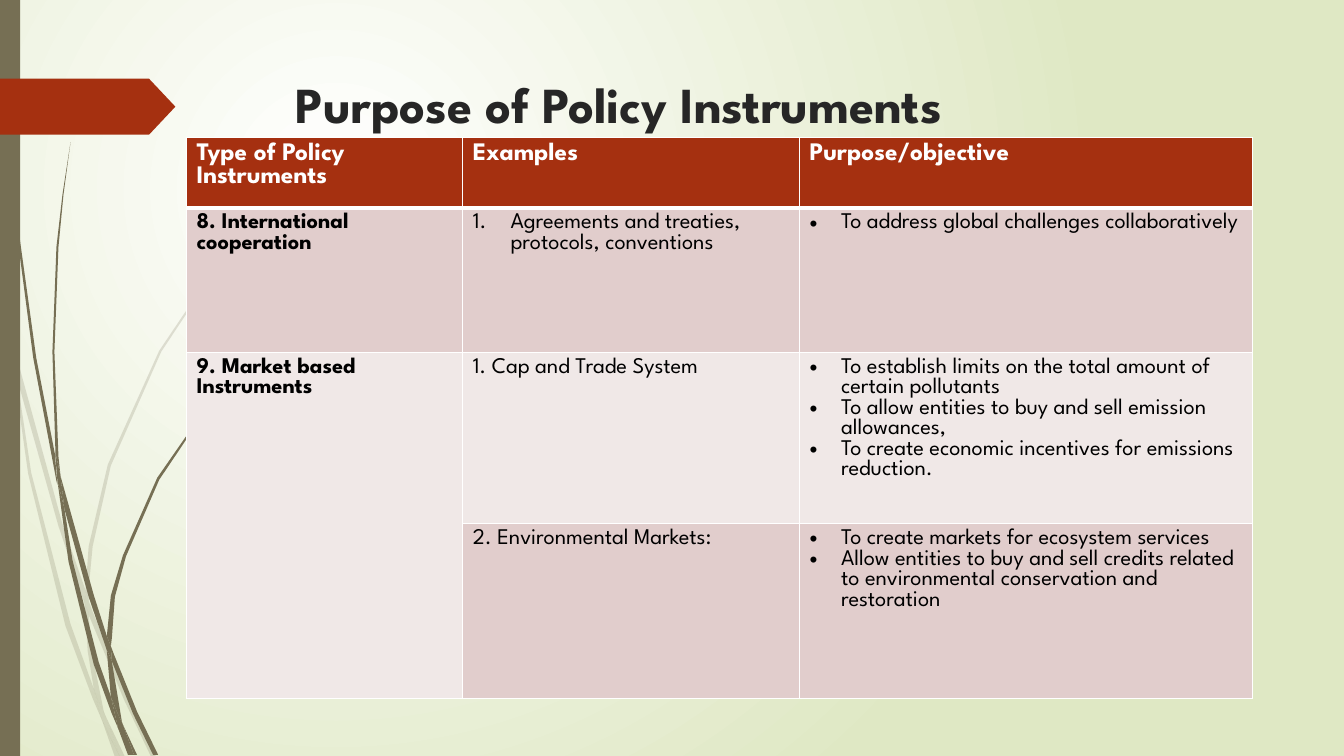
from dataclasses import dataclass

from lxml import etree
from pptx import Presentation
from pptx import util as u
from pptx.dml.color import RGBColor
from pptx.enum import shapes, text
from pptx.oxml import ns

OLIVE = RGBColor(0x76, 0x6F, 0x54)
RUST = RGBColor(0xA5, 0x30, 0x10)
PALE_GREEN = RGBColor(0xDF, 0xE8, 0xC4)
CHARCOAL = RGBColor(0x26, 0x26, 0x26)
ROSE = RGBColor(0xE1, 0xCD, 0xCC)
BLUSH = RGBColor(0xF0, 0xE8, 0xE7)
WHITE = RGBColor(0xFF, 0xFF, 0xFF)
BLACK = RGBColor(0, 0, 0)
FONT = "League Spartan"
GRASS_UNIT = u.Pt(0.72)

Point = tuple[int, int]


@dataclass(frozen=True)
class Grass:
    opacity: int
    blades: list[list[Point]]


@dataclass(frozen=True)
class Entry:
    lines: tuple[str, ...]
    fill: RGBColor
    bold: bool = False
    bullet: str = ""
    size: float = 16
    color: RGBColor = BLACK


FADED_GRASS = Grass(20, [
    [(11, 350), (9, 322), (0, 282), (0, 299), (10, 344)],
    [(58, 522), (84, 599), (85, 586), (62, 520), (14, 345), (17, 376)],
    [(92, 607), (88, 596), (88, 610), (123, 694), (150, 751), (155, 751), (127, 692)],
    [(119, 751), (124, 751), (105, 711)],
    [(93, 683), (70, 619), (31, 469), (17, 376), (11, 350), (28, 470), (65, 621), (92, 693), (101, 714), (99, 707)],
    [(84, 599), (87, 646), (93, 683), (96, 692), (105, 711), (103, 706), (91, 646), (88, 610), (88, 608)],
    [(88, 584), (92, 542), (110, 462), (160, 349), (229, 245), (268, 198), (290, 175), (312, 154), (312, 153),
     (289, 175), (268, 197), (228, 244), (158, 348), (107, 461), (88, 542), (85, 584), (85, 586), (88, 596)],
    [(101, 714), (114, 751), (119, 751)],
    [(88, 608), (88, 610), (88, 596), (85, 586), (84, 599)],
    [(96, 692), (93, 683), (99, 707), (101, 714), (119, 751), (105, 711)],
])
SOLID_GRASS = Grass(100, [
    [(7, 110), (17, 233), (33, 355), (56, 477), (57, 481), (55, 457), (55, 453), (36, 355), (19, 232), (8, 109),
     (5, 48), (4, 0), (3, 0), (4, 48)],
    [(88, 592), (106, 645), (106, 633), (106, 631), (93, 590), (60, 472), (64, 505)],
    [(113, 649), (110, 641), (111, 656), (132, 708), (152, 749), (157, 749), (136, 706)],
    [(110, 691), (98, 657), (72, 556), (64, 505), (57, 477), (68, 557), (93, 659), (111, 708), (117, 722), (116, 717)],
    [(60, 472), (58, 453), (54, 349), (58, 245), (63, 193), (70, 141), (62, 193), (56, 245), (52, 349), (55, 449)],
    [(133, 749), (136, 749), (122, 719)],
    [(57, 477), (64, 505), (60, 472), (55, 449), (55, 453)],
    [(111, 633), (114, 592), (125, 552), (158, 476), (205, 406), (231, 374), (245, 359), (261, 344), (260, 344),
     (245, 358), (231, 373), (204, 405), (156, 474), (122, 551), (110, 591), (106, 631), (110, 641)],
    [(117, 722), (127, 749), (131, 749)],
    [(106, 645), (110, 691), (116, 706), (122, 719), (121, 716), (111, 656), (109, 651)],
    [(106, 645), (109, 651), (111, 656), (110, 641), (106, 631), (106, 633)],
    [(116, 706), (110, 691), (116, 717), (117, 722), (130, 749), (133, 749), (122, 719)],
])

ROWS = [
    [Entry((label,), RUST, bold=True, size=18, color=WHITE)
     for label in ("Type of Policy Instruments", "Examples", "Purpose/objective")],
    [
        Entry(("8. International cooperation",), ROSE, bold=True),
        Entry(("Agreements and treaties, protocols, conventions",), ROSE, bullet="1."),
        Entry(("To address global challenges collaboratively",), ROSE, bullet="•"),
    ],
    [
        Entry(("9. Market based Instruments",), BLUSH, bold=True),
        Entry(("1. Cap and Trade System",), BLUSH),
        Entry((
            "To establish limits on the total amount of certain pollutants",
            "To allow entities to buy and sell emission allowances,",
            "To create economic incentives for emissions reduction.",
        ), BLUSH, bullet="•"),
    ],
    [
        Entry((), BLUSH),
        Entry(("2. Environmental Markets:",), ROSE),
        Entry((
            "To create markets for ecosystem services",
            "Allow entities to buy and sell credits related to environmental conservation and restoration",
        ), ROSE, bullet="•"),
    ],
]
COLUMN_WIDTHS = [197.3, 240.6, 323.8]
ROW_HEIGHTS = [50.4, 103.2, 122.4, 124.8]


def add_xml(parent, tag: str, **attributes: str):
    return etree.SubElement(parent, ns.qn(tag), attributes)


def paint(shape, color: RGBColor) -> None:
    shape.shadow.inherit = False
    shape.fill.solid()
    shape.fill.fore_color.rgb = color
    shape.line.fill.background()


def draw_background(page) -> None:
    fill = page.background.fill
    fill.gradient()
    for stop, color in zip(fill.gradient_stops, (WHITE, PALE_GREEN)):
        stop.color.rgb = color
    gradient = page.element.find(".//" + ns.qn("a:gradFill"))
    gradient.remove(gradient.find(ns.qn("a:lin")))
    circle = add_xml(gradient, "a:path", path="circle")
    add_xml(circle, "a:fillToRect", l="50000", t="50000", r="100000", b="100000")


def draw_grass(page, grass: Grass) -> None:
    for start, *rest in grass.blades:
        builder = page.shapes.build_freeform(*start, scale=GRASS_UNIT)
        builder.add_line_segments(rest)
        shape = builder.convert_to_shape()
        paint(shape, OLIVE)
        if grass.opacity < 100:
            color = shape.element.spPr.find(ns.qn("a:solidFill"))[0]
            add_xml(color, "a:alpha", val=str(grass.opacity * 1000))


def draw_block(page, kind, left: float, top: float, width: float, height: float, color: RGBColor):
    shape = page.shapes.add_shape(kind, u.Pt(left), u.Pt(top), u.Pt(width), u.Pt(height))
    paint(shape, color)
    return shape


def write_text(para, content: str, *, size: float, color: RGBColor, bold: bool = False, bullet: str = "") -> None:
    if bullet:
        indent = u.Pt(22.5 if bullet == "•" else 27)
        properties = para._p.get_or_add_pPr()
        properties.set("marL", str(indent))
        properties.set("indent", str(-indent))
        if bullet == "•":
            add_xml(properties, "a:buFont", typeface="Arial")
            add_xml(properties, "a:buChar", char=bullet)
        else:
            add_xml(properties, "a:buAutoNum", type="arabicPeriod")
    span = para.add_run()
    span.text = content
    span.font.name = FONT
    span.font.size = u.Pt(size)
    span.font.bold = bold
    span.font.color.rgb = color


def draw_title(page) -> None:
    box = page.shapes.add_textbox(u.Pt(204.2), u.Pt(49), u.Pt(702), u.Pt(71.3))
    frame = box.text_frame
    frame.word_wrap = True
    frame.vertical_anchor = text.MSO_ANCHOR.TOP
    write_text(frame.paragraphs[0], "Purpose of Policy Instruments", size=36, color=CHARCOAL, bold=True)


def fill_cell(cell, entry: Entry, bottom_border: float) -> None:
    properties = cell._tc.get_or_add_tcPr()
    for side, width in (("L", 1), ("R", 1), ("T", 1), ("B", bottom_border)):
        border = add_xml(properties, f"a:ln{side}", w=str(u.Pt(width)))
        add_xml(add_xml(border, "a:solidFill"), "a:srgbClr", val=str(WHITE))
    cell.fill.solid()
    cell.fill.fore_color.rgb = entry.fill
    frame = cell.text_frame
    for index, line in enumerate(entry.lines):
        para = frame.add_paragraph() if index else frame.paragraphs[0]
        write_text(para, line, size=entry.size, color=entry.color, bold=entry.bold, bullet=entry.bullet)


def draw_table(page) -> None:
    table = page.shapes.add_table(
        len(ROWS), len(COLUMN_WIDTHS), u.Pt(133.2), u.Pt(98.2),
        u.Pt(sum(COLUMN_WIDTHS)), u.Pt(sum(ROW_HEIGHTS)),
    ).table
    table.horz_banding = False
    for column, width in zip(table.columns, COLUMN_WIDTHS):
        column.width = u.Pt(width)
    for row_index, (row, height, entries) in enumerate(zip(table.rows, ROW_HEIGHTS, ROWS)):
        row.height = u.Pt(height)
        for cell, entry in zip(row.cells, entries):
            fill_cell(cell, entry, 1 if row_index else 3)
    table.cell(2, 0).merge(table.cell(3, 0))


def main() -> None:
    deck = Presentation()
    deck.slide_width, deck.slide_height = u.Pt(960), u.Pt(540)
    page = deck.slides.add_slide(deck.slide_layouts[6])
    draw_background(page)
    for grass in (FADED_GRASS, SOLID_GRASS):
        draw_grass(page, grass)
    draw_block(page, shapes.MSO_SHAPE.RECTANGLE, 0, 0, 14.4, 540, OLIVE)
    arrow = draw_block(page, shapes.MSO_SHAPE.PENTAGON, 0, 56.2, 125.3, 40, RUST)
    arrow.adjustments[0] = 0.47
    draw_title(page)
    draw_table(page)
    deck.save("out.pptx")


if __name__ == "__main__":
    main()
